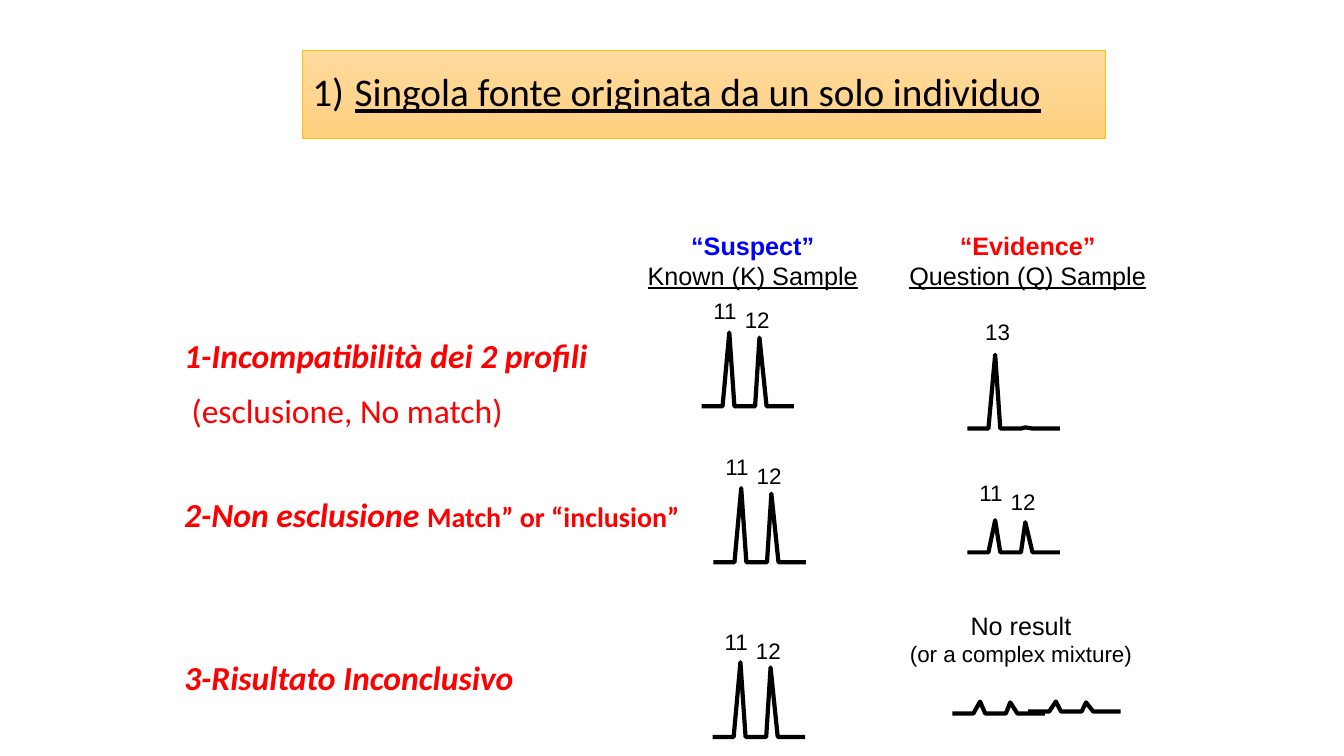
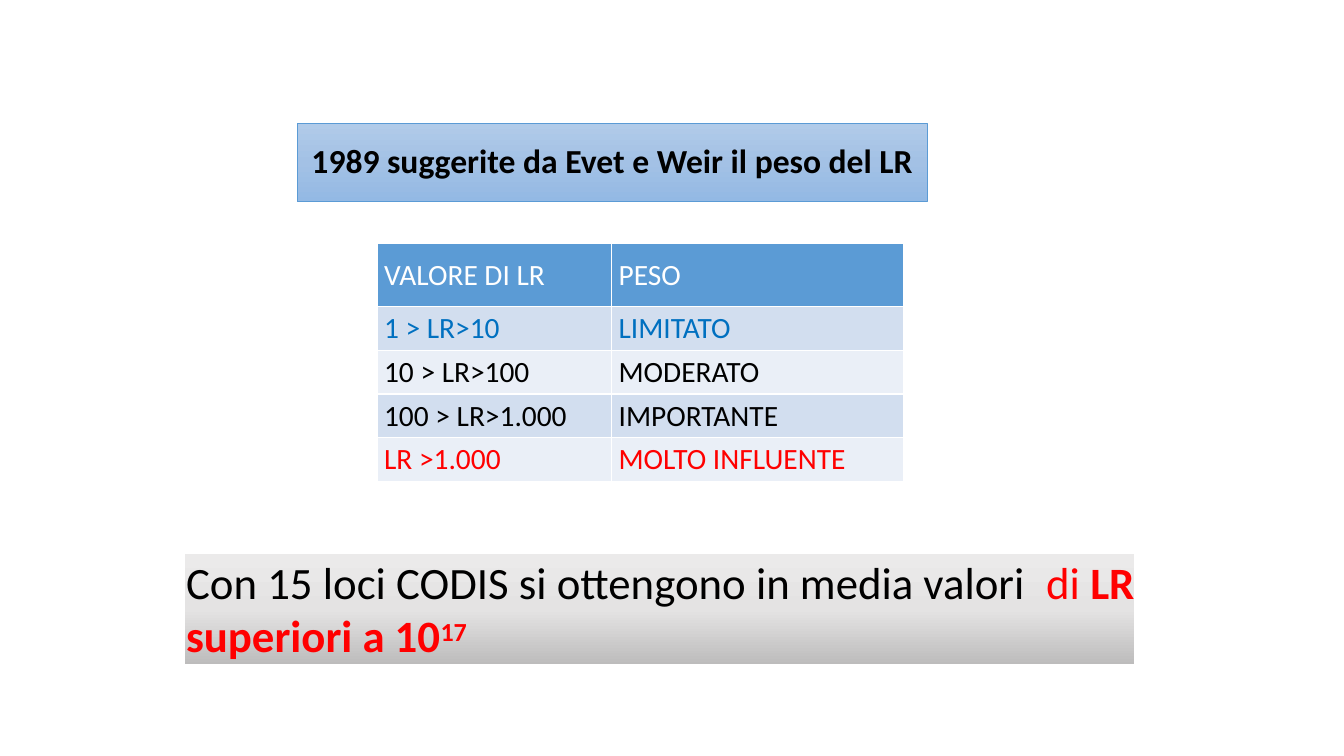
from copy import deepcopy

from lxml.etree import SubElement
from pptx import Presentation
from pptx.dml.color import RGBColor
from pptx.enum.shapes import MSO_SHAPE
from pptx.enum.text import MSO_ANCHOR, PP_ALIGN
from pptx.oxml.ns import qn
from pptx.util import Cm, Pt

BLACK = RGBColor(0x00, 0x00, 0x00)
WHITE = RGBColor(0xFF, 0xFF, 0xFF)
RED = RGBColor(0xFF, 0x00, 0x00)
BLUE = RGBColor(0x00, 0x00, 0xFF)
TABLE_BLUE = RGBColor(0x00, 0x70, 0xC0)
ACCENT = RGBColor(0x5B, 0x9B, 0xD5)
GOLD = RGBColor(0xFF, 0xC0, 0x00)
ROW_FILLS = (RGBColor(0xD2, 0xDE, 0xEF), RGBColor(0xEA, 0xEF, 0xF7))
ORANGE_BAND = [RGBColor.from_string(c) for c in ("FFDB9E", "FFD590", "FFD07C")]
BLUE_BAND = [RGBColor.from_string(c) for c in ("B1CBE9", "A3C1E5", "93B9E4")]
GREY_BAND = [RGBColor.from_string(c) for c in ("EBEAEA", "E4E3E3", "BDBCBC")]

SOURCE_TITLE = "Singola fonte originata da un solo individuo"
HEAD_WIDTH = 7
SAMPLE_HEADS = [  # centre, role, colour, sample
    (18.97, "“Suspect”", BLUE, "Known (K) Sample"),
    (25.9, "“Evidence”", RED, "Question (Q) Sample"),
]
STRONG = {"bold": True, "italic": True}
OUTCOMES = [  # top, paragraphs as (runs, left indent)
    (8.36, [([("1-Incompatibilità dei 2 profili", STRONG)], 0.15),
            ([("(esclusione, No match)", {})], 0.34)]),
    (12.36, [([("2-Non esclusione ", STRONG),
               ("Match” or “inclusion”", {"bold": True, "size": 20})], 0.15)]),
    (16.48, [([("3-Risultato Inconclusivo", STRONG)], 0.15)]),
]
NO_RESULT_CENTRE = 25.73
NO_RESULT = [("No result", 18), ("(or a complex mixture)", 16)]

PEAK_FEET = [(0.53, 0.7, 0.83), (1.35, 1.46, 1.64)]  # rise, tip, fall
TRACE_WIDTH = 2.33
KNOWN_ALLELES = [("11", 0.05, 2.87), ("12", 0.84, 2.64)]
TRACES = [  # left, baseline, peak heights, alleles as (name, offset, rise)
    (17.68, 10.24, (1.86, 1.73), KNOWN_ALLELES),
    (17.98, 14.17, (1.87, 1.73), KNOWN_ALLELES),
    (17.96, 18.57, (1.88, 1.75), KNOWN_ALLELES),
    (24.38, 10.8, (1.86, 0.03), [("13", 0.2, 2.92)]),
    (24.38, 13.92, (0.81, 0.76), [("11", 0.05, 1.96), ("12", 0.84, 1.75)]),
    (24, 17.98, (0.3, 0.28), []),
    (25.91, 17.93, (0.25, 0.23), []),
]

WEIGHT_TITLE = "1989 suggerite da Evet e Weir il peso del LR"
WEIGHTS = [  # LR value, weight, text colour
    ("VALORE DI LR", "PESO", WHITE),
    ("1 > LR>10", "LIMITATO", TABLE_BLUE),
    ("10 > LR>100", "MODERATO", BLACK),
    ("100 > LR>1.000", "IMPORTANTE", BLACK),
    ("LR >1.000", "MOLTO INFLUENTE", RED),
]
WEIGHT_COLUMNS = (5.91, 7.36)
HEADER_HEIGHT, ROW_HEIGHT = 1.6, 1.1
CONCLUSION = [
    ("Con 15 loci CODIS si ottengono in media valori  ", {}),
    ("di ", {"color": RED}),
    ("LR superiori a 10", {"color": RED, "bold": True}),
    ("17", {"color": RED, "bold": True, "raised": 26}),
]


def format_run(run, size=24, font="Calibri", color=BLACK, bold=False,
               italic=False, underline=False, raised=0):
    run.font.size = Pt(size)
    run.font.name = font
    run.font.color.rgb = color
    run.font.bold = bold
    run.font.italic = italic
    run.font.underline = underline
    if raised:
        run.font._element.set("baseline", str(raised * 1000))


def add_text(frame, text, align=PP_ALIGN.LEFT, spacing=1, before=0, left=0,
             hanging=0, numbering=None, **style):
    """Add one paragraph; text is a string or a list of (string, style) runs."""
    paragraph = frame.paragraphs[0]
    if paragraph.runs:
        paragraph = frame.add_paragraph()
        paragraph.space_before = Pt(before)
    paragraph.alignment = align
    paragraph.line_spacing = spacing
    properties = paragraph._p.get_or_add_pPr()
    properties.set("marL", str(Cm(left)))
    properties.set("indent", str(-Cm(hanging)))
    if numbering:
        SubElement(properties, qn("a:buAutoNum"), type=numbering)
    for words, own_style in [(text, {})] if isinstance(text, str) else text:
        run = paragraph.add_run()
        run.text = words
        format_run(run, **{**style, **own_style})


def add_label(slide, left, top, width, height):
    frame = slide.shapes.add_textbox(
        Cm(left), Cm(top), Cm(width), Cm(height)).text_frame
    frame.word_wrap = True
    return frame


def add_band(slide, left, top, width, height, colors, outline=None):
    """Add a rectangle with a three-colour vertical gradient."""
    band = slide.shapes.add_shape(
        MSO_SHAPE.RECTANGLE, Cm(left), Cm(top), Cm(width), Cm(height))
    band.shadow.inherit = False
    band.fill.gradient()
    band.fill.gradient_angle = 270
    stops = band._element.spPr.find(qn("a:gradFill")).find(qn("a:gsLst"))
    stops.append(deepcopy(stops[-1]))
    for index, (stop, color) in enumerate(zip(band.fill.gradient_stops, colors)):
        stop.color.rgb = color
        stop.position = index / 2
    if outline is None:
        band.line.fill.background()
    else:
        band.line.color.rgb = outline
        band.line.width = Pt(0.5)
    frame = band.text_frame
    frame.word_wrap = True
    frame.vertical_anchor = MSO_ANCHOR.MIDDLE
    return frame


def add_trace(slide, left, baseline, heights, alleles):
    points = []
    for (rise, tip, fall), height in zip(PEAK_FEET, heights):
        points += [(rise, 0), (tip, height), (fall, 0)]
    points.append((TRACE_WIDTH, 0))
    builder = slide.shapes.build_freeform(Cm(left), Cm(baseline))
    builder.add_line_segments(
        [(Cm(left + x), Cm(baseline - y)) for x, y in points], close=False)
    trace = builder.convert_to_shape()
    trace.shadow.inherit = False
    trace.fill.background()
    trace.line.color.rgb = BLACK
    trace.line.width = Pt(3)
    SubElement(trace.line._get_or_add_ln(), qn("a:round"))
    for name, offset, rise in alleles:
        allele = add_label(slide, left + offset, baseline - rise, 1.5, 0.94)
        add_text(allele, name, size=16, font="Arial")


def build_source_slide(slide):
    title = add_band(slide, 7.62, 1.27, 20.24, 2.21, ORANGE_BAND, GOLD)
    add_text(title, SOURCE_TITLE, spacing=0.9, left=1.07, hanging=1.07,
             numbering="arabicParenR", size=28, underline=True)
    for top, paragraphs in OUTCOMES:
        outcome = add_label(slide, 4.24, top, 13.6, 1.27 * len(paragraphs))
        for runs, indent in paragraphs:
            add_text(outcome, runs, spacing=0.99, before=10.6, left=indent,
                     color=RED)
    for centre, role, color, sample in SAMPLE_HEADS:
        head = add_label(slide, centre - HEAD_WIDTH / 2, 5.67, HEAD_WIDTH, 1.78)
        add_text(head, role, align=PP_ALIGN.CENTER, size=18, font="Arial",
                 color=color, bold=True)
        add_text(head, sample, align=PP_ALIGN.CENTER, size=18, font="Arial",
                 underline=True)
    for trace in TRACES:
        add_trace(slide, *trace)
    no_result = add_label(slide, NO_RESULT_CENTRE - HEAD_WIDTH / 2, 15.25,
                          HEAD_WIDTH, 1.7)
    for words, size in NO_RESULT:
        add_text(no_result, words, align=PP_ALIGN.CENTER, size=size, font="Arial")


def add_weight_table(slide):
    height = HEADER_HEIGHT + ROW_HEIGHT * (len(WEIGHTS) - 1)
    table = slide.shapes.add_table(
        len(WEIGHTS), len(WEIGHT_COLUMNS), Cm(9.5), Cm(6.13),
        Cm(sum(WEIGHT_COLUMNS)), Cm(height)).table
    for column, width in zip(table.columns, WEIGHT_COLUMNS):
        column.width = Cm(width)
    for index, (*words, color) in enumerate(WEIGHTS):
        table.rows[index].height = Cm(ROW_HEIGHT if index else HEADER_HEIGHT)
        for cell, text in zip(table.rows[index].cells, words):
            cell.fill.solid()
            cell.fill.fore_color.rgb = ROW_FILLS[(index - 1) % 2] if index else ACCENT
            cell.vertical_anchor = MSO_ANCHOR.MIDDLE
            cell.margin_left = cell.margin_right = Cm(0.18)
            cell.margin_top = cell.margin_bottom = Cm(0.1)
            add_text(cell.text_frame, text, size=21, color=color)


def build_weight_slide(slide):
    title = add_band(slide, 7.49, 3.1, 15.88, 1.98, BLUE_BAND, ACCENT)
    add_text(title, WEIGHT_TITLE, align=PP_ALIGN.CENTER, spacing=0.9, bold=True)
    add_weight_table(slide)
    conclusion = add_band(slide, 4.66, 13.97, 23.93, 2.77, GREY_BAND)
    conclusion.vertical_anchor = MSO_ANCHOR.TOP
    conclusion.margin_left = conclusion.margin_right = 0
    conclusion.margin_top = conclusion.margin_bottom = 0
    add_text(conclusion, CONCLUSION, align=PP_ALIGN.JUSTIFY, left=0.03, size=32)


def main():
    deck = Presentation()
    deck.slide_width, deck.slide_height = Cm(33.87), Cm(19.05)
    for build in (build_source_slide, build_weight_slide):
        build(deck.slides.add_slide(deck.slide_layouts[6]))
    deck.save("out.pptx")


if __name__ == "__main__":
    main()
